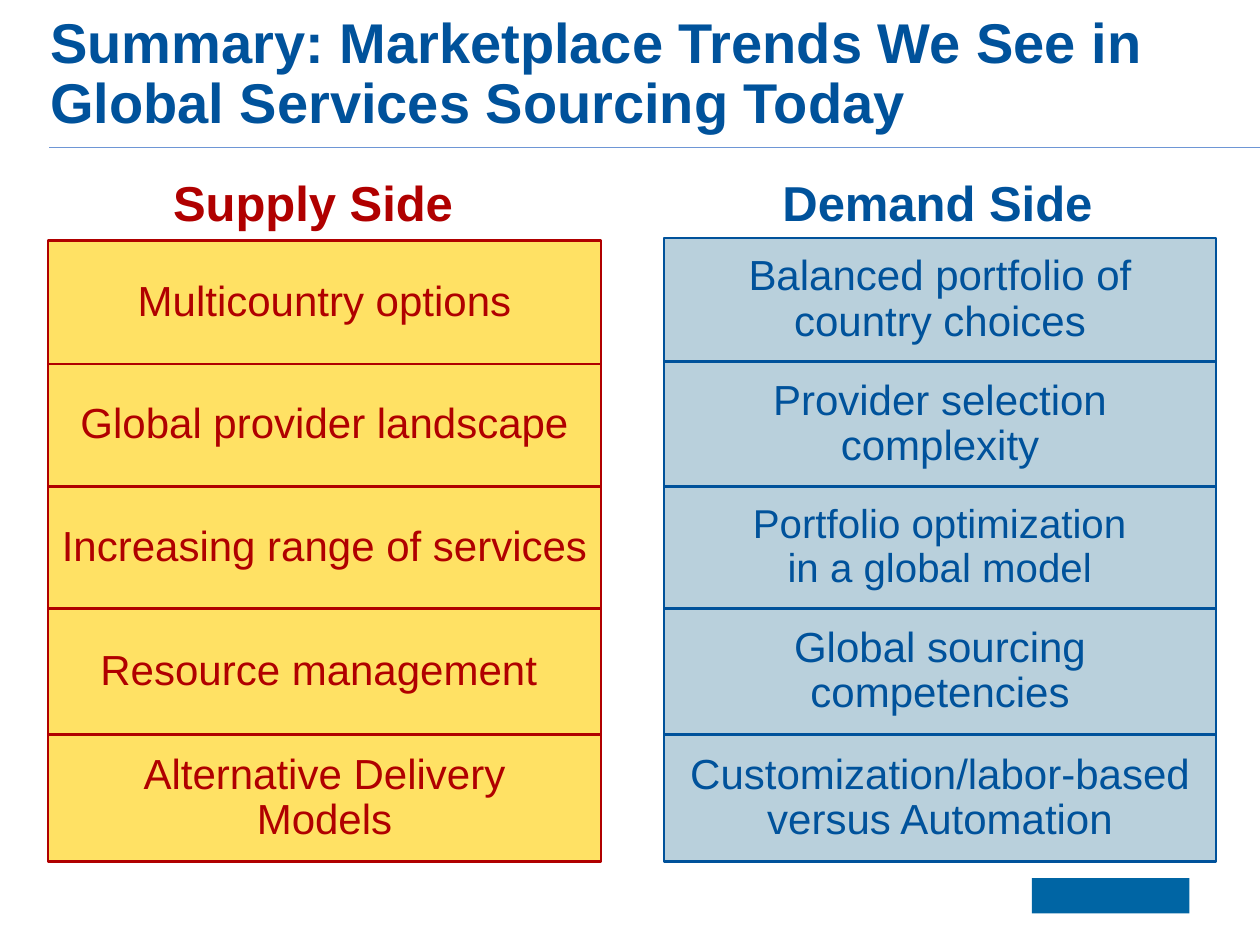
from lxml import etree
from pptx import Presentation
from pptx import util as u
from pptx.dml.color import RGBColor
from pptx.enum import shapes, text
from pptx.oxml.ns import qn

COLORS = {
    "blue": "00529B",
    "pale_blue": "B9D0DC",
    "red": "B00000",
    "yellow": "FFE164",
    "rule": "6E96D5",
    "mark": "0065A4",
}
FONT = "Arial"
ROWS_BOTTOM = 6.84

# Rows are (text, font size); \v breaks a line inside the paragraph
SUPPLY_ROWS = [
    ("Multicountry options", 24),
    ("Global provider landscape", 24),
    ("Increasing range of services", 24),
    ("Resource management ", 24),
    ("Alternative Delivery\vModels", 24),
]
DEMAND_ROWS = [
    ("Balanced portfolio of country choices", 24),
    ("Provider selection complexity", 24),
    ("Portfolio optimization\vin a global model", 23),
    ("Global sourcing competencies", 24),
    ("Customization/labor-based versus Automation", 24),
]


def color(name):
    return RGBColor.from_string(COLORS[name])


def inches(*lengths):
    return [u.Inches(length) for length in lengths]


def write(shape, words, size, color_name, bold=False, align=text.PP_ALIGN.CENTER):
    frame = shape.text_frame
    frame.word_wrap = True
    para = frame.paragraphs[0]
    para.text = words
    para.alignment = align
    for span in para.runs:
        span.font.name = FONT
        span.font.size = u.Pt(size)
        span.font.bold = bold
        span.font.color.rgb = color(color_name)
    return frame, para


def add_block(page, box, fill):
    block = page.shapes.add_shape(shapes.MSO_SHAPE.RECTANGLE, *inches(*box))
    block.shadow.inherit = False
    block.fill.solid()
    block.fill.fore_color.rgb = color(fill)
    return block


def add_title(page, box, words):
    title = page.shapes.add_textbox(*inches(*box))
    frame, para = write(title, words, 32, "blue", True, text.PP_ALIGN.LEFT)
    frame.vertical_anchor = text.MSO_ANCHOR.BOTTOM
    frame.margin_top = frame.margin_bottom = u.Inches(0.1)
    para.line_spacing = 0.9


def add_rule(page, left, right, top):
    rule = page.shapes.add_connector(
        shapes.MSO_CONNECTOR.STRAIGHT, *inches(left, top, right, top))
    rule.line.color.rgb = color("rule")
    rule.line.width = u.Pt(1)
    etree.SubElement(rule.element.spPr, qn("a:effectLst"))


def add_heading(page, box, words, color_name):
    write(page.shapes.add_textbox(*inches(*box)), words, 28, color_name, True)


def add_column(page, left, width, tops, rows, ink, fill):
    """Stack the rows; each one reaches down to the top of the next."""
    bottoms = tops[1:] + [ROWS_BOTTOM]
    for (words, size), top, bottom in zip(rows, tops, bottoms):
        block = add_block(page, (left, top, width, bottom - top), fill)
        block.line.color.rgb = color(ink)
        block.line.width = u.Pt(1.5)
        frame, para = write(block, words, size, ink)
        frame.vertical_anchor = text.MSO_ANCHOR.MIDDLE
        para.line_spacing = 0.9


def add_brand_mark(page, box):
    add_block(page, box, "mark").line.fill.background()


def main():
    deck = Presentation()
    deck.slide_width, deck.slide_height = inches(10, 7.5)
    page = deck.slides.add_slide(deck.slide_layouts[6])

    # Footer mark and title area
    add_brand_mark(page, (8.19, 6.97, 1.25, 0.28))
    add_rule(page, 0.39, 10, 1.17)
    add_title(page, (0.3, 0.21, 9.15, 0.97),
              "Summary: Marketplace Trends We See in Global Services Sourcing Today")

    # Supply column
    add_heading(page, (1, 1.32, 2.97, 0.57), "Supply Side", "red")
    add_column(page, 0.38, 4.39, [1.91, 2.89, 3.86, 4.83, 5.83],
               SUPPLY_ROWS, "red", "yellow")

    # Demand column
    add_heading(page, (5.35, 1.32, 4.18, 0.57), "Demand Side", "blue")
    add_column(page, 5.27, 4.38, [1.89, 2.87, 3.86, 4.83, 5.83],
               DEMAND_ROWS, "blue", "pale_blue")

    deck.save("out.pptx")


if __name__ == "__main__":
    main()
